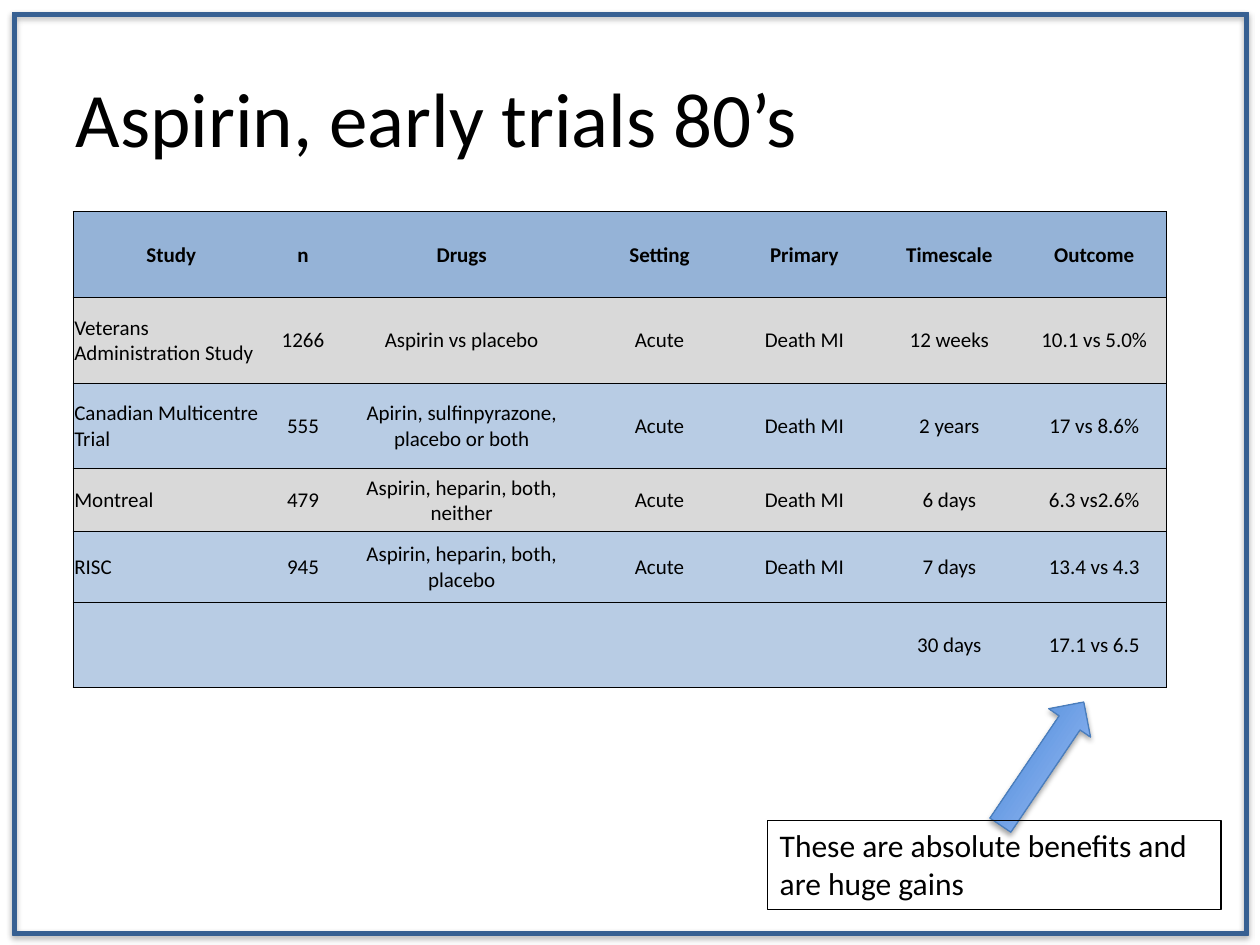
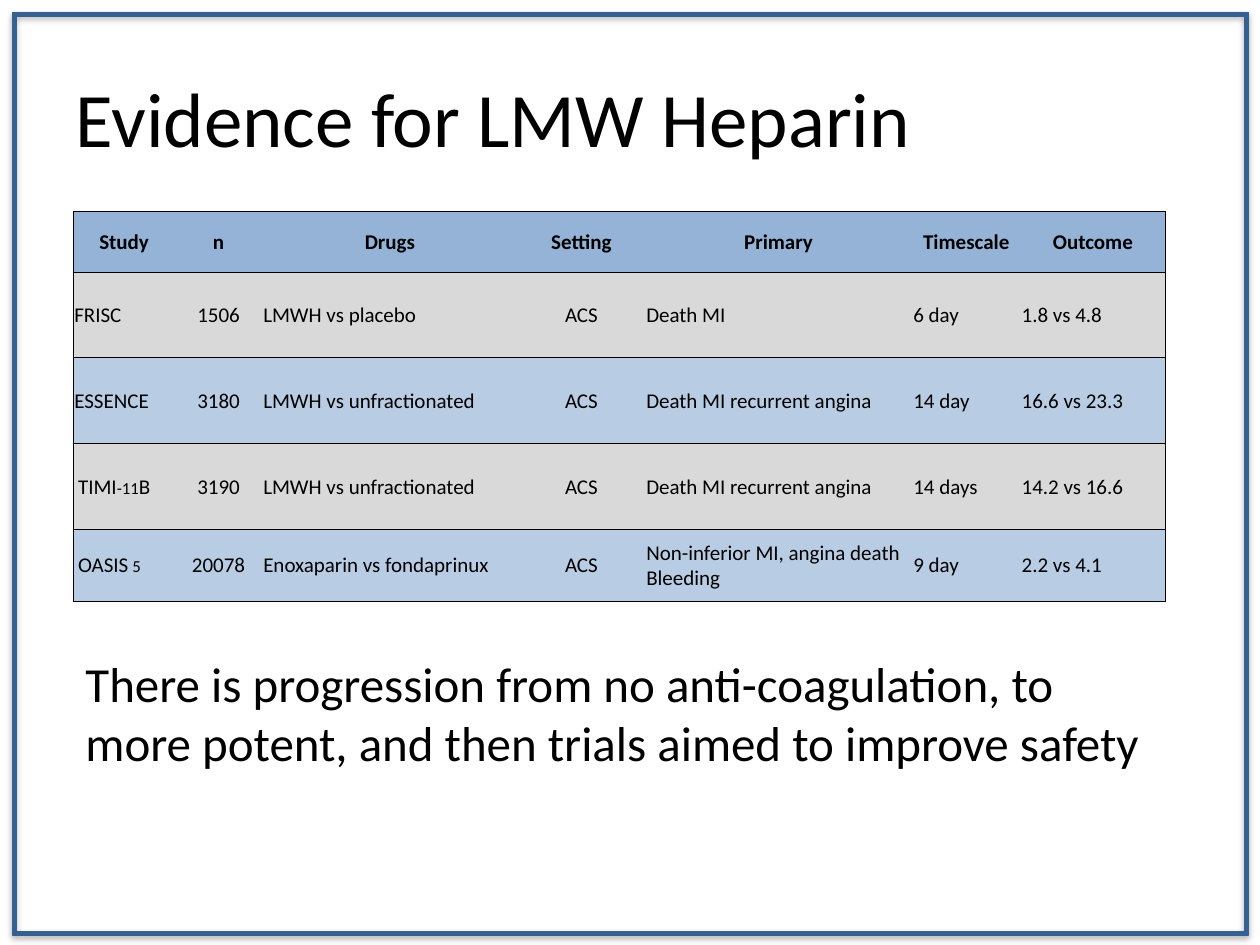
from dataclasses import dataclass

from lxml.etree import SubElement
from pptx import Presentation
from pptx.dml.color import RGBColor
from pptx.enum.shapes import MSO_SHAPE
from pptx.enum.text import MSO_ANCHOR, MSO_AUTO_SIZE, PP_ALIGN
from pptx.oxml.ns import qn
from pptx.util import Inches, Pt


@dataclass(frozen=True)
class Theme:
    font: str = "Calibri"
    title: int = 44
    statement: int = 28
    callout: int = 18
    cell: int = 12
    text: RGBColor = RGBColor.from_string("000000")
    frame: RGBColor = RGBColor.from_string("376092")
    header: RGBColor = RGBColor.from_string("95B3D7")
    grey_row: RGBColor = RGBColor.from_string("D9D9D9")
    blue_row: RGBColor = RGBColor.from_string("B8CCE4")
    arrow_dark: RGBColor = RGBColor.from_string("3F80CE")
    arrow_light: RGBColor = RGBColor.from_string("A4C4FF")
    arrow_line: RGBColor = RGBColor.from_string("4B7EBC")


T = Theme()
LEFT, CENTER = PP_ALIGN.LEFT, PP_ALIGN.CENTER
HEADINGS = ["Study", "n", "Drugs", "Setting", "Primary", "Timescale", "Outcome"]

slides = [
    dict(
        title="Aspirin, early trials 80’s",
        cols=[1.56, 0.53, 1.99, 1.15, 1.15, 1.15, 1.15],
        heights=[0.68, 0.68, 0.68, 0.5, 0.56, 0.68],
        fills=[T.header, T.grey_row, T.blue_row, T.grey_row, T.blue_row, T.blue_row],
        centered={1, 2, 3, 4, 5, 6},
        small_caps=False,
        indented=set(),
        rows=[
            ["Veterans Administration Study", "1266", "Aspirin vs placebo",
             "Acute", "Death MI", "12 weeks", "10.1 vs 5.0%"],
            ["Canadian Multicentre Trial", "555", "Apirin, sulfinpyrazone, placebo or both",
             "Acute", "Death MI", "2 years", "17 vs 8.6%"],
            ["Montreal", "479", "Aspirin, heparin, both, neither",
             "Acute", "Death MI", "6 days", "6.3 vs2.6%"],
            ["RISC", "945", "Aspirin, heparin, both, placebo",
             "Acute", "Death MI", "7 days", "13.4 vs 4.3"],
            ["", "", "", "", "", "30 days", "17.1 vs 6.5"],
        ],
    ),
    dict(
        title="Evidence for LMW Heparin",
        cols=[0.81, 0.69, 2.03, 1.01, 2.12, 0.86, 1.15],
        heights=[0.48, 0.68, 0.68, 0.68, 0.57],
        fills=[T.header, T.grey_row, T.blue_row, T.grey_row, T.blue_row],
        centered={1, 3},
        small_caps=True,
        indented={"TIMI-11B", "OASIS 5"},
        rows=[
            ["FRISC", "1506", "LMWH vs placebo", "ACS", "Death MI", "6 day", "1.8 vs 4.8"],
            ["ESSENCE", "3180", "LMWH vs unfractionated", "ACS",
             "Death MI recurrent angina", "14 day", "16.6 vs 23.3"],
            ["TIMI-11B", "3190", "LMWH vs unfractionated", "ACS",
             "Death MI recurrent angina", "14 days", "14.2 vs 16.6"],
            ["OASIS 5", "20078", "Enoxaparin vs fondaprinux", "ACS",
             "Non-inferior MI, angina death\nBleeding", "9 day", "2.2 vs 4.1"],
        ],
    ),
]


def write(tf, text, size, align=LEFT, bold=False):
    tf.text = text
    tf.word_wrap = True
    for p in tf.paragraphs:
        p.alignment = align
        for r in p.runs:
            r.font.name, r.font.size, r.font.bold = T.font, Pt(size), bold
            r.font.color.rgb = T.text


def add_soft_shadow(shape):
    shape.shadow.inherit = False
    effects = shape._element.spPr.find(qn("a:effectLst"))
    shadow = SubElement(effects, qn("a:outerShdw"), blurRad=str(Pt(3.1)),
                        dist=str(Pt(1.8)), dir="5400000", rotWithShape="0")
    color = SubElement(shadow, qn("a:srgbClr"), val="000000")
    SubElement(color, qn("a:alpha"), val="35000")


prs = Presentation()
prs.slide_width, prs.slide_height = Inches(10), Inches(7.5)

for data in slides:
    s = prs.slides.add_slide(prs.slide_layouts[5])
    title = s.shapes.title
    title.left, title.top, title.width, title.height = map(Inches, (0.5, 0.3, 9, 1.25))
    write(title.text_frame, data["title"], T.title)
    title.text_frame.vertical_anchor = MSO_ANCHOR.MIDDLE

    frame = s.shapes.add_shape(MSO_SHAPE.FRAME, Inches(0.1), Inches(0.1),
                               Inches(9.81), Inches(7.32))
    frame.adjustments[0] = 0.004
    frame.fill.solid()
    frame.fill.fore_color.rgb = T.frame
    frame.line.color.rgb = T.frame
    frame.line.width = Pt(0.75)
    add_soft_shadow(frame)

    rows = [HEADINGS] + data["rows"]
    table = s.shapes.add_table(len(rows), len(HEADINGS), Inches(0.58), Inches(1.68),
                               Inches(sum(data["cols"])),
                               Inches(sum(data["heights"]))).table
    for column, width in zip(table.columns, data["cols"]):
        column.width = Inches(width)

    for i, row in enumerate(rows):
        table.rows[i].height = Inches(data["heights"][i])
        for j, text in enumerate(row):
            cell = table.cell(i, j)
            is_header = i == 0
            centered = is_header or j in data["centered"]
            write(cell.text_frame, text, T.cell, CENTER if centered else LEFT, is_header)
            cell.vertical_anchor = MSO_ANCHOR.MIDDLE
            cell.margin_left = Inches(0.04 if text in data["indented"] else 0.01)
            cell.margin_right = cell.margin_top = Inches(0.01)
            cell.margin_bottom = 0
            if data["small_caps"] and j == 0 and not is_header:
                for r in cell.text_frame.paragraphs[0].runs:
                    r._r.get_or_add_rPr().set("cap", "small")

            # Horizontal rules everywhere, vertical ones only at the outer edges
            edges = {"lnL": j == 0, "lnR": j == len(row) - 1, "lnT": True, "lnB": True}
            tcPr = cell._tc.get_or_add_tcPr()
            for edge, visible in edges.items():
                ln = SubElement(tcPr, qn(f"a:{edge}"), w=str(Pt(0.5)))
                if visible:
                    fill = SubElement(ln, qn("a:solidFill"))
                    SubElement(fill, qn("a:srgbClr"), val=str(T.text))
                else:
                    SubElement(ln, qn("a:noFill"))
            cell.fill.solid()
            cell.fill.fore_color.rgb = data["fills"][i]

aspirin, heparin = prs.slides

callout = aspirin.shapes.add_group_shape()
arrow = callout.shapes.add_shape(MSO_SHAPE.LEFT_ARROW, Inches(7.68), Inches(5.86),
                                 Inches(1.18), Inches(0.4))
arrow.rotation = 124.1
arrow.fill.gradient()
arrow.fill.gradient_angle = 90
for stop, color in zip(arrow.fill.gradient_stops, (T.arrow_dark, T.arrow_light)):
    stop.color.rgb = color
arrow.line.color.rgb = T.arrow_line
arrow.line.width = Pt(0.75)
add_soft_shadow(arrow)

box = callout.shapes.add_textbox(Inches(6.09), Inches(6.51), Inches(3.6), Inches(0.71))
write(box.text_frame, "These are absolute benefits and are huge gains", T.callout)
box.text_frame.auto_size = MSO_AUTO_SIZE.SHAPE_TO_FIT_TEXT
box.line.color.rgb = T.text
box.line.width = Pt(0.75)

statement = heparin.shapes.add_textbox(Inches(0.58), Inches(5.14), Inches(8.68), Inches(1.04))
write(statement.text_frame,
      "There is progression from no anti-coagulation, to more potent, "
      "and then trials aimed to improve safety", T.statement)
statement.text_frame.auto_size = MSO_AUTO_SIZE.SHAPE_TO_FIT_TEXT

prs.save("out.pptx")
